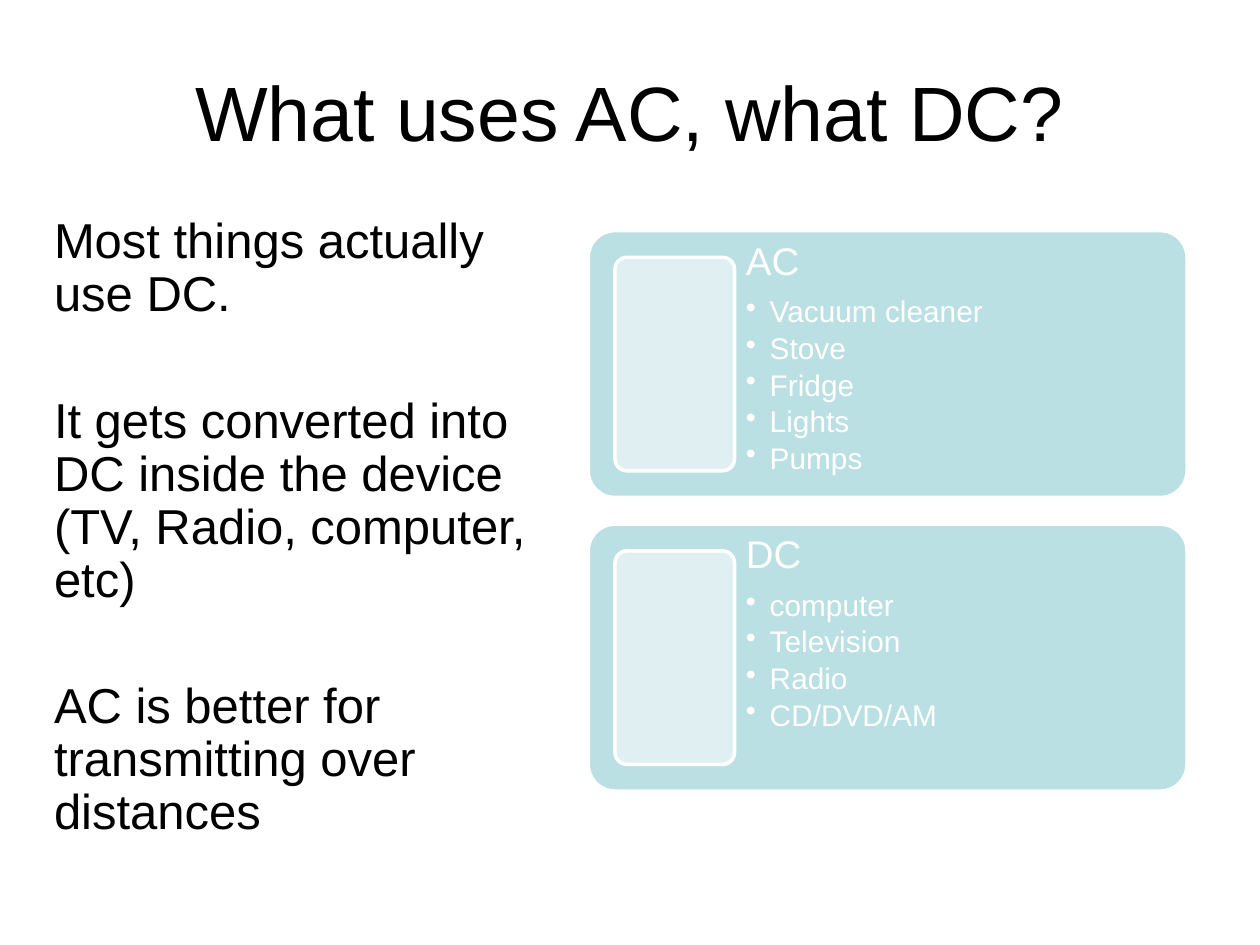
from pptx import Presentation, util as u
from pptx.dml.color import RGBColor
from pptx.enum import shapes, text
from pptx.oxml.ns import qn
from lxml import etree

prs = Presentation()
prs.slide_width, prs.slide_height = u.Cm(25.4), u.Cm(19.05)
slide = prs.slides.add_slide(prs.slide_layouts[6])


def hue(code):
    return RGBColor.from_string(code)


def add_text(box, lines, color, sizes):
    """Fill a text box; sizes holds one point size per line."""
    frame = box.text_frame
    frame.word_wrap = True
    frame.text = "\n".join(lines)
    for par, size in zip(frame.paragraphs, sizes):
        font = par.runs[0].font
        font.name, font.size = "Arial", u.Pt(size)
        font.color.rgb = hue(color)
    return frame


# Title
box = slide.shapes.add_textbox(u.Cm(1.27), u.Cm(0.64), u.Cm(22.86), u.Cm(3.18))
frame = add_text(box, ["What uses AC, what DC?"], "000000", [44])
frame.vertical_anchor = text.MSO_ANCHOR.MIDDLE
frame.paragraphs[0].alignment = text.PP_ALIGN.CENTER

# Body text on the left
notes = [
    "Most things actually use DC.",
    "It gets converted into DC inside the device (TV, Radio, computer, etc)",
    "AC is better for transmitting over distances",
]
box = slide.shapes.add_textbox(u.Cm(0.84), u.Cm(4.24), u.Cm(10.16), u.Cm(12.57))
frame = add_text(box, notes, "000000", [28] * len(notes))
for i, par in enumerate(frame.paragraphs):
    par.line_spacing = 0.9
    par.space_before = u.Pt(42 if i else 0)

# Cards on the right: panel, inner tile and list
cards = [
    ("AC", ["Vacuum cleaner", "Stove", "Fridge", "Lights", "Pumps"]),
    ("DC", ["computer", "Television", "Radio", "CD/DVD/AM"]),
]
left, top, wide, high = 11.86, 4.65, 12.07, 5.38
step = high * 1.1   # gap is a tenth of the card height
pad = high / 10
tile = 2.41
inset = left + pad + tile

for i, (head, items) in enumerate(cards):
    y = top + i * step
    panes = [
        (left, y, wide, high, "BBE0E3"),
        (left + pad, y + pad, tile, high - 2 * pad, "E0F0F2"),
    ]
    for px, py, pw, ph, fill in panes:
        pane = slide.shapes.add_shape(
            shapes.MSO_SHAPE.ROUNDED_RECTANGLE,
            u.Cm(px), u.Cm(py), u.Cm(pw), u.Cm(ph))
        pane.adjustments[0] = 0.1
        pane.shadow.inherit = False
        pane.fill.solid()
        pane.fill.fore_color.rgb = hue(fill)
        pane.line.color.rgb = hue("FFFFFF")
        pane.line.width = u.Pt(2)

    box = slide.shapes.add_textbox(
        u.Cm(inset), u.Cm(y), u.Cm(left + wide - inset), u.Cm(high))
    frame = add_text(box, [head] + items, "FFFFFF", [22] + [17] * len(items))
    frame.margin_left = frame.margin_right = u.Cm(0.23)
    frame.margin_top = frame.margin_bottom = u.Cm(0.23)
    for n, par in enumerate(frame.paragraphs):
        par.line_spacing = 0.9
        par.space_after = u.Pt(2.55 if n else 7.7)
        if n:
            par.level = 1
            props = par._p.get_or_add_pPr()
            props.set("marL", str(u.Cm(0.48)))
            props.set("indent", str(-u.Cm(0.48)))
            etree.SubElement(props, qn("a:buChar")).set("char", "•")

prs.save("out.pptx")
